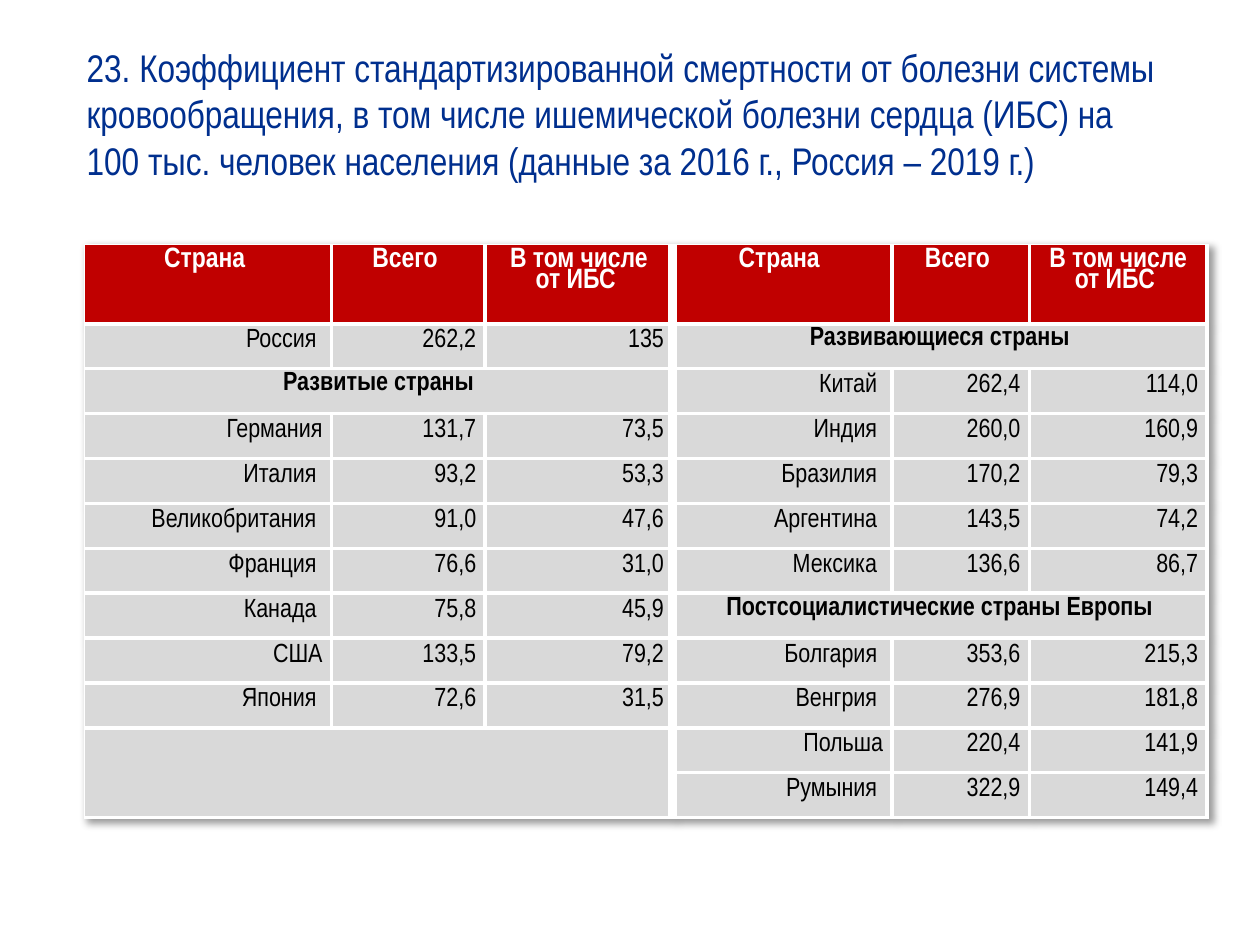
from dataclasses import dataclass

import pptx
import pptx.dml.color
import pptx.enum.text
import pptx.oxml
import pptx.oxml.ns
import pptx.util
from pptx.util import Inches

ALIGN = pptx.enum.text.PP_ALIGN
NAMESPACE = pptx.oxml.ns.nsdecls("a")


@dataclass(frozen=True)
class Theme:
    font: str = "Arial Narrow"
    title: str = "002F8E"
    header: str = "C00000"
    body: str = "D9D9D9"
    light: str = "FFFFFF"
    dark: str = "000000"
    title_size: float = 22
    header_size: float = 16
    body_size: float = 15
    outer_line: float = 1
    inner_line: float = 2.25
    divider_line: float = 6


THEME = Theme()

TITLE = (
    "23. Коэффициент стандартизированной смертности от болезни системы "
    "кровообращения, в том числе ишемической болезни сердца (ИБС) на "
    "100\u00a0тыс. человек населения (данные за 2016 г., Россия – 2019 г.)"
)
HEADER = ("Страна ", "Всего ", "В том числе от ИБС ")
# A row with a single entry spans its half of the table.
LEFT_ROWS = [
    ("Россия ", "262,2", "135"),
    ("Развитые страны",),
    ("Германия", "131,7", "73,5"),
    ("Италия ", "93,2", "53,3"),
    ("Великобритания ", "91,0", "47,6"),
    ("Франция ", "76,6", "31,0"),
    ("Канада ", "75,8", "45,9"),
    ("США", "133,5", "79,2"),
    ("Япония ", "72,6", "31,5"),
    ("",),
    ("",),
]
RIGHT_ROWS = [
    ("Развивающиеся страны",),
    ("Китай ", "262,4", "114,0"),
    ("Индия ", "260,0", "160,9"),
    ("Бразилия ", "170,2", "79,3"),
    ("Аргентина ", "143,5", "74,2"),
    ("Мексика ", "136,6", "86,7"),
    ("Постсоциалистические страны Европы",),
    ("Болгария ", "353,6", "215,3"),
    ("Венгрия ", "276,9", "181,8"),
    ("Польша", "220,4", "141,9"),
    ("Румыния ", "322,9", "149,4"),
]
COLUMN_WIDTHS = (1.96, 1.22, 1.49, 1.74, 1.09, 1.41)
HEADER_HEIGHT = 0.63


def add_span(para, text, size, color, bold=False):
    span = para.add_run()
    span.text = text
    span.font.name = THEME.font
    span.font.size = pptx.util.Pt(size)
    span.font.bold = bold
    span.font.color.rgb = pptx.dml.color.RGBColor.from_string(color)


def add_title(page, left, top, width, height):
    box = page.shapes.add_textbox(Inches(left), Inches(top), Inches(width), Inches(height))
    frame = box.text_frame
    frame.word_wrap = True
    frame.vertical_anchor = pptx.enum.text.MSO_ANCHOR.MIDDLE
    add_span(frame.paragraphs[0], TITLE, THEME.title_size, THEME.title)


def set_borders(cell, widths):
    """Draw the left, right, top and bottom borders; a width of 0 hides one."""
    properties = cell._tc.get_or_add_tcPr()
    for position, (side, width) in enumerate(zip("LRTB", widths)):
        paint = (
            f'<a:solidFill><a:srgbClr val="{THEME.light}"/></a:solidFill>'
            if width else "<a:noFill/>"
        )
        line = f'<a:ln{side} {NAMESPACE} w="{pptx.util.Pt(width)}">{paint}</a:ln{side}>'
        properties.insert(position, pptx.oxml.parse_xml(line))


def style_cell(cell, row, column, last_row):
    cell.fill.solid()
    color = THEME.body if row else THEME.header
    cell.fill.fore_color.rgb = pptx.dml.color.RGBColor.from_string(color)
    blank_half = column < 3
    set_borders(cell, (
        THEME.outer_line if column == 0
        else THEME.divider_line if column == 3 else THEME.inner_line,
        THEME.divider_line if column == 2 else THEME.inner_line,
        THEME.outer_line if row == 0
        else 0 if blank_half and row == last_row else THEME.inner_line,
        0 if blank_half and row == last_row - 1 else THEME.inner_line,
    ))


def set_data_margins(cell):
    cell.margin_left = cell.margin_right = Inches(0.07)
    cell.margin_top = Inches(0.01)
    cell.margin_bottom = 0


def fill_half(table, first_column, rows):
    """Write the header and the rows of one three-column half."""
    for row, entries in enumerate([HEADER, *rows]):
        banner = len(entries) == 1
        if banner:
            table.cell(row, first_column).merge(table.cell(row, first_column + 2))
        for offset, text in enumerate(entries):
            cell = table.cell(row, first_column + offset)
            if row and (not banner or not text):
                set_data_margins(cell)
            if not text:
                continue
            para = cell.text_frame.paragraphs[0]
            centred = banner or row == 0
            para.alignment = ALIGN.CENTER if centred else ALIGN.RIGHT
            para.line_spacing = 0.8 if centred else 1.15
            if row == 0:
                add_span(para, text, THEME.header_size, THEME.light, bold=True)
            else:
                add_span(para, text, THEME.body_size, THEME.dark, bold=banner)


def add_shadow(table):
    table._tbl.tblPr.insert(0, pptx.oxml.parse_xml(
        f'<a:effectLst {NAMESPACE}><a:outerShdw blurRad="50800" dist="38100" '
        'dir="2700000" algn="tl" rotWithShape="0"><a:srgbClr val="000000">'
        '<a:alpha val="40000"/></a:srgbClr></a:outerShdw></a:effectLst>'
    ))


def add_mortality_table(page, left, top, width, height):
    row_count = len(LEFT_ROWS) + 1
    table = page.shapes.add_table(
        row_count, len(COLUMN_WIDTHS),
        Inches(left), Inches(top), Inches(width), Inches(height),
    ).table
    table.first_row = table.horz_banding = False
    add_shadow(table)
    scale = width / sum(COLUMN_WIDTHS)
    for column, column_width in zip(table.columns, COLUMN_WIDTHS):
        column.width = Inches(column_width * scale)
    body_height = (height - HEADER_HEIGHT) / (row_count - 1)
    for row in range(row_count):
        table.rows[row].height = Inches(body_height if row else HEADER_HEIGHT)
        for column in range(len(COLUMN_WIDTHS)):
            style_cell(table.cell(row, column), row, column, row_count - 1)
    fill_half(table, 0, LEFT_ROWS)
    fill_half(table, 3, RIGHT_ROWS)


def main():
    deck = pptx.Presentation()
    deck.slide_width, deck.slide_height = Inches(10), Inches(7.5)
    page = deck.slides.add_slide(deck.slide_layouts[6])
    add_title(page, 0.59, 0.29, 9.06, 1.22)
    add_mortality_table(page, 0.67, 1.94, 8.91, 4.55)
    deck.save("out.pptx")


if __name__ == "__main__":
    main()
